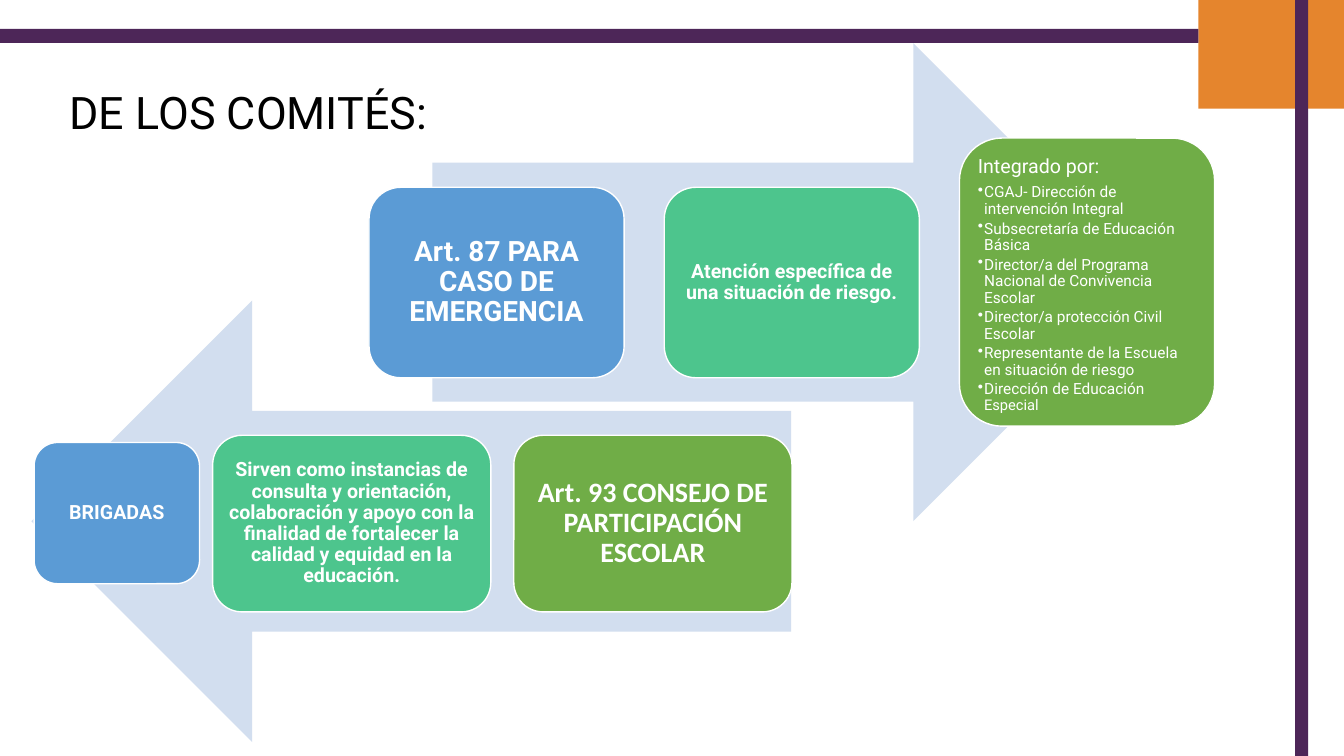
from lxml import etree
from pptx import Presentation
from pptx.dml.color import RGBColor
from pptx.enum.shapes import MSO_SHAPE as Shape
from pptx.enum.text import MSO_ANCHOR as Anchor, MSO_AUTO_SIZE as Auto, PP_ALIGN as Align
from pptx.oxml.ns import qn
from pptx.util import Cm, Pt

WHITE = RGBColor(0xFF, 0xFF, 0xFF)
BLACK = RGBColor(0x00, 0x00, 0x00)
ORANGE = RGBColor(0xE5, 0x85, 0x2D)
PURPLE = RGBColor(0x4D, 0x26, 0x58)
PALE = RGBColor(0xD2, 0xDE, 0xEF)
BLUE = RGBColor(0x5B, 0x9B, 0xD5)
MINT = RGBColor(0x4D, 0xC5, 0x8D)
GREEN = RGBColor(0x70, 0xAD, 0x47)


def draw(kind, box, fill):
    shape = slide.shapes.add_shape(kind, *[Cm(n) for n in box])
    shape.shadow.inherit = False
    shape.fill.solid()
    shape.fill.fore_color.rgb = fill
    shape.line.fill.background()
    return shape


def style(para, size, color, bold=False, font="Roboto"):
    para.line_spacing = 0.9
    for run in para.runs:
        run.font.size = Pt(size)
        run.font.name = font
        run.font.bold = bold
        run.font.color.rgb = color


deck = Presentation()
deck.slide_width, deck.slide_height = Cm(33.87), Cm(19.05)
slide = deck.slides.add_slide(deck.slide_layouts[5])

# Corner and bars
draw(Shape.RECTANGLE, (30.2, 0, 3.67, 2.74), ORANGE)
draw(Shape.RECTANGLE, (0, 0.73, 30.2, 0.35), PURPLE)
draw(Shape.RECTANGLE, (32.64, 0, 0.33, 19.05), PURPLE)

# Title
title = slide.shapes.title
title.left, title.top, title.width, title.height = Cm(1.5), Cm(1.83), Cm(10.92), Cm(1.8)
frame = title.text_frame
frame.text = "DE LOS COMITÉS:"
frame.auto_size = Auto.NONE
frame.word_wrap = True
frame.vertical_anchor = Anchor.BOTTOM
frame.paragraphs[0].alignment = Align.LEFT
style(frame.paragraphs[0], 32, BLACK)

# Arrows behind the cards
draw(Shape.RIGHT_ARROW, (10.9, 1.09, 18.14, 12.04), PALE)
back = draw(Shape.RIGHT_ARROW, (0.79, 7.57, 19.15, 11.13), PALE)
back.rotation = 180

# Cards: box, fill, text, size, font
top = [(9.3 + 7.44 * i, 4.72, 6.43, 4.8) for i in range(2)]
low = [(5.36 + 7.59 * i, 10.97, 7.01, 4.45) for i in range(2)]
cards = [
    (top[0], BLUE, "Art. 87 PARA CASO DE EMERGENCIA", 20, "Roboto"),
    (top[1], MINT, "Atención específica de una situación de riesgo.", 14, "Roboto"),
    ((24.18, 3.48, 6.43, 7.26), GREEN, "Integrado por:", 14, "Roboto"),
    ((0.86, 11.15, 4.17, 3.56), BLUE, "BRIGADAS", 14, "Roboto"),
    (low[0], MINT, "Sirven como instancias de consulta y orientación, colaboración y apoyo "
     "con la finalidad de fortalecer la calidad y equidad en la educación.", 14, "Roboto"),
    (low[1], GREEN, "Art. 93 CONSEJO DE PARTICIPACIÓN ESCOLAR", 20, "Calibri"),
]
frames = []
for box, fill, text, size, font in cards:
    card = draw(Shape.ROUNDED_RECTANGLE, box, fill)
    card.line.color.rgb = WHITE
    card.line.width = Pt(1)
    frame = card.text_frame
    frame.word_wrap = True
    frame.vertical_anchor = Anchor.MIDDLE
    pad = Cm(0.2 if size == 20 else 0.15)
    frame.margin_left = frame.margin_right = frame.margin_top = frame.margin_bottom = pad
    frame.text = text
    frame.paragraphs[0].alignment = Align.CENTER
    style(frame.paragraphs[0], size, WHITE, True, font)
    frames.append(frame)

# Members listed in the third card
frame = frames[2]
frame.vertical_anchor = Anchor.TOP
head = frame.paragraphs[0]
head.alignment = Align.LEFT
head.space_after = Pt(5)
style(head, 14, WHITE)
members = [
    "CGAJ- Dirección de intervención Integral",
    "Subsecretaría de Educación Básica",
    "Director/a del Programa Nacional de Convivencia Escolar",
    "Director/a protección Civil Escolar",
    "Representante de la Escuela en situación de riesgo",
    "Dirección de Educación ",
]
for name in members:
    para = frame.add_paragraph()
    para.text = name
    para.level = 1
    para.alignment = Align.LEFT
    para.space_after = Pt(2)
    style(para, 11, WHITE)
    props = para._p.get_or_add_pPr()
    props.set("marL", str(Cm(0.16)))
    props.set("indent", str(-Cm(0.16)))
    etree.SubElement(props, qn("a:buChar")).set("char", "•")

# The last word is slightly smaller
last = para.add_run()
last.text = "Especial"
last.font.size = Pt(10.5)
last.font.name = "Roboto"
last.font.color.rgb = WHITE

deck.save("out.pptx")
